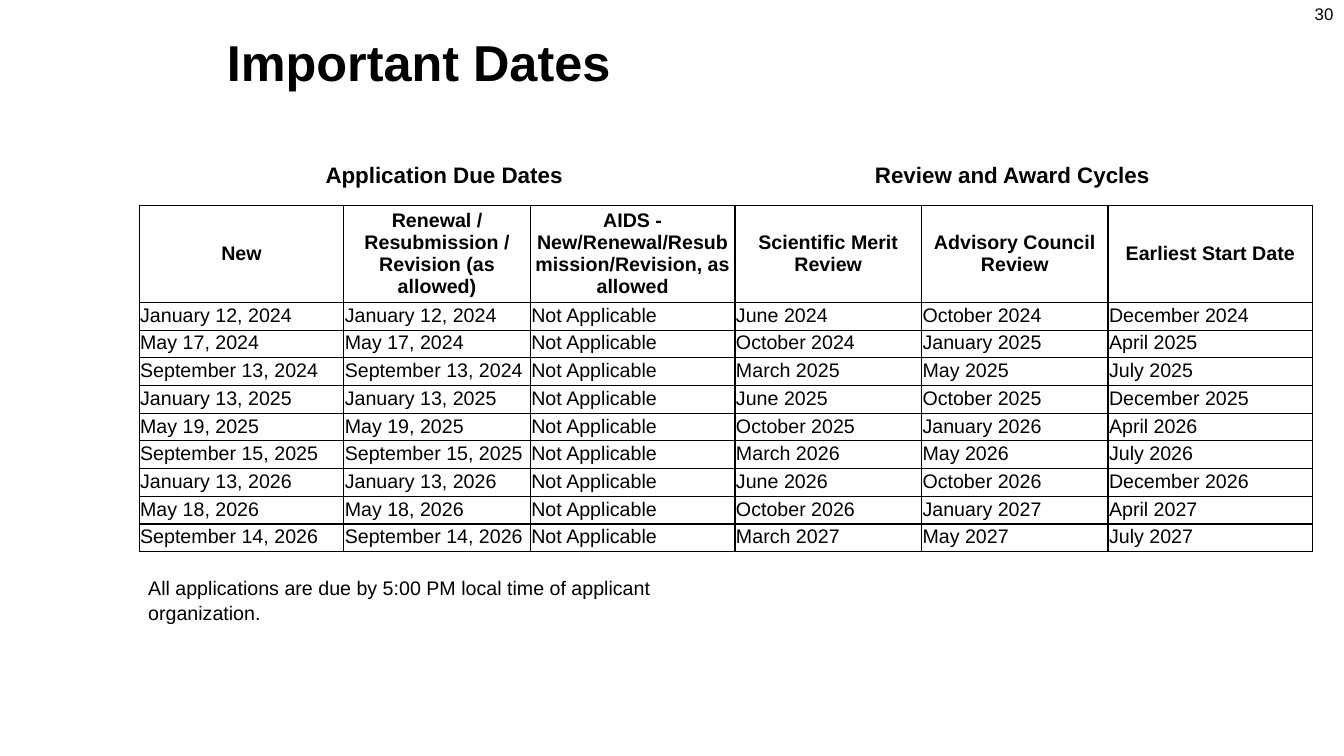
from dataclasses import dataclass

from lxml.etree import SubElement
from pptx import Presentation
from pptx.dml.color import RGBColor
from pptx.enum.text import MSO_ANCHOR, MSO_AUTO_SIZE, PP_ALIGN
from pptx.oxml import parse_xml
from pptx.oxml.ns import nsdecls, qn
from pptx.util import Inches, Pt

# Content
TITLE = "Important Dates"
PAGE_NUMBER = "30"
GROUPS = [  # heading, left, width
    ("Application Due Dates", 3.13, 2.58),
    ("Review and Award Cycles", 8.58, 2.97),
]
HEADERS = [
    "New",
    "Renewal / Resubmission / Revision (as allowed)",
    "AIDS -\nNew/Renewal/Resub mission/Revision, as allowed",
    "Scientific Merit Review",
    "Advisory Council Review",
    "Earliest Start Date",
]
AIDS_DUE = "Not Applicable"
CYCLES = [  # due date, merit review, council review, earliest start
    ("January 12, 2024", "June 2024", "October 2024", "December 2024"),
    ("May 17, 2024", "October 2024", "January 2025", "April 2025"),
    ("September 13, 2024", "March 2025", "May 2025", "July 2025"),
    ("January 13, 2025", "June 2025", "October 2025", "December 2025"),
    ("May 19, 2025", "October 2025", "January 2026", "April 2026"),
    ("September 15, 2025", "March 2026", "May 2026", "July 2026"),
    ("January 13, 2026", "June 2026", "October 2026", "December 2026"),
    ("May 18, 2026", "October 2026", "January 2027", "April 2027"),
    ("September 14, 2026", "March 2027", "May 2027", "July 2027"),
]
NOTE = "All applications are due by 5:00 PM local time of applicant organization."


@dataclass(frozen=True)
class Theme:
    font: str = "Arial"
    ink: str = "000000"
    title: float = 36
    group: float = 16
    body: float = 14
    number: float = 12
    border: float = 1


THEME = Theme()
WIDE, NARROW = 2.03, 1.85
COLUMN_WIDTHS = [WIDE, NARROW, WIDE, NARROW, NARROW, WIDE]
HEADER_HEIGHT, ROW_HEIGHT = 0.96, 0.275
TABLE_LEFT, TABLE_TOP = 1.38, 2.04


def write(frame, text, size, bold=False, align=PP_ALIGN.LEFT):
    frame.text = text
    for para in frame.paragraphs:
        para.alignment = align
        for span in para.runs:
            span.font.name = THEME.font
            span.font.size = Pt(size)
            span.font.bold = bold
            span.font.color.rgb = RGBColor.from_string(THEME.ink)


def set_insets(target, left=0, top=0, right=0, bottom=0):
    target.margin_left, target.margin_top = Inches(left), Inches(top)
    target.margin_right, target.margin_bottom = Inches(right), Inches(bottom)


def add_text(page, text, left, top, width, height, size, bold=False, wrap=False):
    box = page.shapes.add_textbox(*map(Inches, (left, top, width, height)))
    box.text_frame.word_wrap = wrap
    write(box.text_frame, text, size, bold)
    return box.text_frame


def add_borders(cell):
    properties = cell._tc.get_or_add_tcPr()
    for index, side in enumerate(("lnL", "lnR", "lnT", "lnB")):
        line = parse_xml(f'<a:{side} {nsdecls("a")} w="{Pt(THEME.border)}"/>')
        fill = SubElement(line, qn("a:solidFill"))
        SubElement(fill, qn("a:srgbClr"), val=THEME.ink)
        properties.insert(index, line)


def add_dates_table(page):
    rows = [HEADERS] + [(due, due, AIDS_DUE, *reviews) for due, *reviews in CYCLES]
    heights = [HEADER_HEIGHT] + [ROW_HEIGHT] * len(CYCLES)
    table = page.shapes.add_table(
        len(rows), len(HEADERS), Inches(TABLE_LEFT), Inches(TABLE_TOP),
        Inches(sum(COLUMN_WIDTHS)), Inches(sum(heights))).table
    table.first_row = table.horz_banding = False
    for column, width in zip(table.columns, COLUMN_WIDTHS):
        column.width = Inches(width)
    for number, (row, height, texts) in enumerate(zip(table.rows, heights, rows)):
        row.height = Inches(height)
        header = number == 0
        for cell, text in zip(row.cells, texts):
            align = PP_ALIGN.CENTER if header else PP_ALIGN.LEFT
            write(cell.text_frame, text, THEME.body, header, align)
            set_insets(cell, left=0 if header else 0.01, top=0 if header else 0.02)
            cell.vertical_anchor = MSO_ANCHOR.MIDDLE if header else MSO_ANCHOR.TOP
            cell.fill.background()
            add_borders(cell)


def main():
    deck = Presentation()
    deck.slide_width, deck.slide_height = Inches(13.33), Inches(7.5)
    page = deck.slides.add_slide(deck.slide_layouts.get_by_name("Title Only"))

    # Title
    title = page.shapes.title
    title.left, title.top = Inches(1), Inches(0.1)
    title.width, title.height = Inches(11.18), Inches(1.36)
    write(title.text_frame, TITLE, THEME.title, bold=True)
    title.text_frame.auto_size = MSO_AUTO_SIZE.NONE
    title.text_frame.vertical_anchor = MSO_ANCHOR.TOP
    set_insets(title.text_frame, left=1.25, top=0.21)

    # Group headings and table
    for heading, left, width in GROUPS:
        add_text(page, heading, left, 1.55, width, 0.37, THEME.group, bold=True)
    add_dates_table(page)

    # Note and page number
    note = add_text(page, NOTE, 1.46, 5.69, 6.15, 0.5, THEME.body, wrap=True)
    set_insets(note, left=0.01, top=0.01, right=0.1)
    note.paragraphs[0].line_spacing = 1.07
    number = add_text(page, PAGE_NUMBER, 13.03, 0.02, 0.21, 0.22, THEME.number)
    set_insets(number, left=0.01, top=0.02)

    deck.save("out.pptx")


if __name__ == "__main__":
    main()
